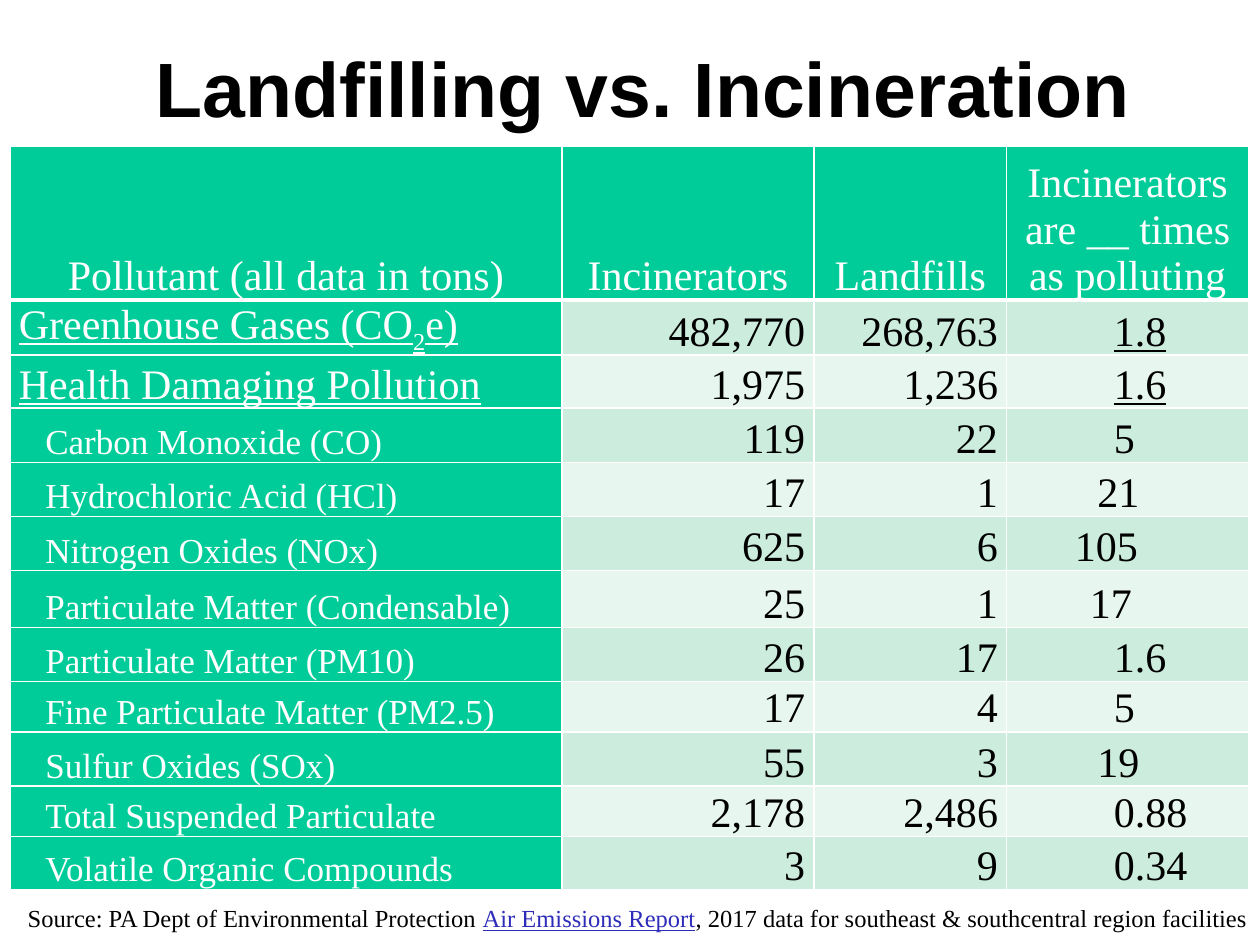
from lxml import etree
from pptx import Presentation
from pptx.dml.color import RGBColor
from pptx.enum.text import MSO_ANCHOR, PP_ALIGN
from pptx.oxml.ns import qn
from pptx.util import Inches, Pt

LEFT, CENTER, RIGHT = PP_ALIGN.LEFT, PP_ALIGN.CENTER, PP_ALIGN.RIGHT
MIDDLE, BOTTOM = MSO_ANCHOR.MIDDLE, MSO_ANCHOR.BOTTOM

BLACK = RGBColor(0x00, 0x00, 0x00)
WHITE = RGBColor(0xFF, 0xFF, 0xFF)
GREEN = RGBColor(0x00, 0xCC, 0x99)
DARK_BAND = RGBColor(0xCC, 0xEC, 0xDE)
LIGHT_BAND = RGBColor(0xE7, 0xF6, 0xEF)
LINK_BLUE = RGBColor(0x2D, 0x2D, 0xB9)

SERIF = "Times New Roman"
TITLE = {"name": "Arial", "size": Pt(44), "bold": True}
LABEL = {"name": SERIF, "size": Pt(24), "bold": False, "underline": False}
DETAIL = LABEL | {"size": Pt(20)}
GROUP = LABEL | {"underline": True}
SOURCE = LABEL | {"size": Pt(14)}

# Boxes: left, top, width, height in inches
TITLE_BOX = (0.42, 0.4, 9.38, 0.58)
TABLE_BOX = (0.08, 1.16, 9.83, 5.93)
SOURCE_BOX = (0, 7.08, 10, 0.41)
COLUMNS = (4.38, 2, 1.53, 1.92)
ROWS = (1.22, 0.44, 0.42, 0.43, 0.43, 0.43, 0.45, 0.43, 0.4, 0.43, 0.4, 0.42)
DETAIL_INDENT = 0.21

HEADINGS = ("Pollutant (all data in tons)", "Incinerators", "Landfills",
            "Incinerators are __ times as polluting")
# Label, incinerators, landfills, ratio, decimal tab of the ratio
GROUPS = [
    (("Greenhouse Gases (CO", "2", "e)"), "482,770", "268,763", "1.8", 1),
    (("Health Damaging Pollution",), "1,975", "1,236", "1.6", 1),
]
DETAILS = [
    (("Carbon Monoxide (CO)",), "119", "22", "5", 1),
    (("Hydrochloric Acid (HCl)",), "17", "1", "21", 1.13),
    (("Nitrogen Oxides (NOx)",), "625", "6", "105", 1.31),
    (("Particulate Matter (Condensable)",), "25", "1", "17", 1.19),
    (("Particulate Matter (PM10)",), "26", "17", "1.6", 1),
    (("Fine Particulate Matter (PM2.5)",), "17", "4", "5", 1),
    (("Sulfur Oxides (SOx)",), "55", "3", "19", 1.13),
    (("Total Suspended Particulate",), "2,178", "2,486", "0.88", 1),
    (("Volatile Organic Compounds",), "3", "9", "0.34", 1),
]


def add_span(para, text, style, color):
    span = para.add_run()
    span.text = text
    for name, value in style.items():
        setattr(span.font, name, value)
    span.font.color.rgb = color
    return span


def set_borders(cell, bottom_width):
    properties = cell._tc.get_or_add_tcPr()
    for side in "LRTB":
        width = bottom_width if side == "B" else 1
        line = etree.SubElement(properties, qn(f"a:ln{side}"), w=str(Pt(width)))
        fill = etree.SubElement(line, qn("a:solidFill"))
        etree.SubElement(fill, qn("a:srgbClr"), val=str(WHITE))


def format_cell(cell, fill, align, bottom_width=1):
    """Style a cell and return its paragraph."""
    set_borders(cell, bottom_width)
    cell.fill.solid()
    cell.fill.fore_color.rgb = fill
    layout = {"vertical_anchor": BOTTOM, "margin_left": Inches(0.07),
              "margin_right": Inches(0.07), "margin_top": 0, "margin_bottom": 0}
    for name, value in layout.items():
        setattr(cell, name, value)
    para = cell.text_frame.paragraphs[0]
    para.alignment = align
    return para


def add_decimal_tab(para, position):
    tabs = etree.SubElement(para._p.get_or_add_pPr(), qn("a:tabLst"))
    etree.SubElement(tabs, qn("a:tab"), pos=str(Inches(position)), algn="dec")


def fill_row(cells, record, band, is_group):
    label, incinerators, landfills, ratio, tab = record
    # Pollutant
    para = format_cell(cells[0], GREEN, LEFT)
    if not is_group:
        para._p.get_or_add_pPr().set("marL", str(Inches(DETAIL_INDENT)))
    for index, text in enumerate(label):
        span = add_span(para, text, GROUP if is_group else DETAIL, WHITE)
        if index == 1:
            span._r.get_or_add_rPr().set("baseline", "-25000")
    # Tons
    for cell, tons in zip(cells[1:3], (incinerators, landfills)):
        add_span(format_cell(cell, band, RIGHT), tons, LABEL, BLACK)
    # Ratio
    para = format_cell(cells[3], band, RIGHT)
    add_decimal_tab(para, tab)
    add_span(para, ratio, GROUP if is_group else LABEL, BLACK)
    add_span(para, "\t", LABEL, BLACK)


def add_title(page, box):
    title = page.shapes.title
    title.left, title.top, title.width, title.height = map(Inches, box)
    title.text_frame.vertical_anchor = MIDDLE
    para = title.text_frame.paragraphs[0]
    para.alignment = CENTER
    add_span(para, "Landfilling vs. Incineration", TITLE, BLACK)


def add_pollution_table(page, box):
    frame = page.shapes.add_table(len(ROWS), len(COLUMNS), *map(Inches, box))
    table = frame.table
    for column, width in zip(table.columns, COLUMNS):
        column.width = Inches(width)
    for row, height in zip(table.rows, ROWS):
        row.height = Inches(height)
    for cell, heading in zip(table.rows[0].cells, HEADINGS):
        add_span(format_cell(cell, GREEN, CENTER, 3), heading, LABEL, WHITE)
    for index, record in enumerate(GROUPS + DETAILS):
        band = LIGHT_BAND if index % 2 else DARK_BAND
        cells = list(table.rows[index + 1].cells)
        fill_row(cells, record, band, index < len(GROUPS))


def add_source(page, box):
    frame = page.shapes.add_textbox(*map(Inches, box)).text_frame
    frame.word_wrap = True
    frame.vertical_anchor = MIDDLE
    para = frame.paragraphs[0]
    para.alignment = RIGHT
    add_span(para, "Source: PA Dept of Environmental Protection ", SOURCE, BLACK)
    add_span(para, "Air Emissions Report", SOURCE | {"underline": True}, LINK_BLUE)
    add_span(para, ", 2017 data for southeast & southcentral region facilities",
             SOURCE, BLACK)


def main():
    deck = Presentation()
    deck.slide_width, deck.slide_height = Inches(10), Inches(7.5)
    page = deck.slides.add_slide(deck.slide_layouts.get_by_name("Title Only"))
    add_title(page, TITLE_BOX)
    add_pollution_table(page, TABLE_BOX)
    add_source(page, SOURCE_BOX)
    deck.save("out.pptx")


if __name__ == "__main__":
    main()
